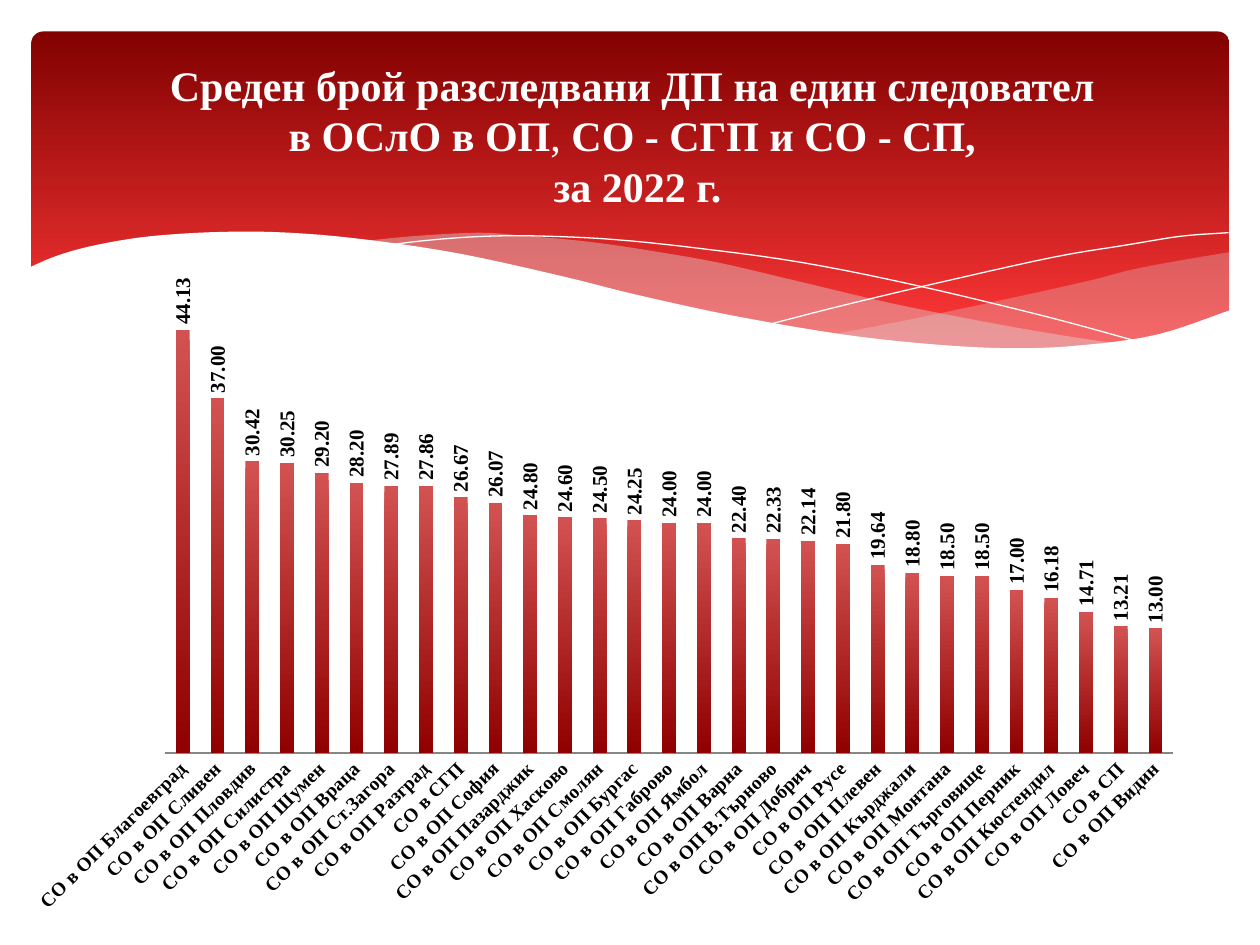
"""Build a slide with a red wave banner and a column chart of cases per investigator."""
from dataclasses import dataclass

from lxml import etree
from pptx import Presentation
from pptx import util as u
from pptx.chart.data import CategoryChartData
from pptx.dml.color import RGBColor
from pptx.enum import chart as charts, shapes, text
from pptx.oxml import parse_xml
from pptx.oxml.ns import nsdecls, qn


@dataclass(frozen=True)
class Theme:
    font: str = "Times New Roman"
    base_font: str = "Cabin"
    title_size: int = 24
    base_size: int = 18
    label_size: int = 12
    axis_size: int = 11
    white: str = "FFFFFF"
    black: str = "000000"
    pale: str = "DEDEE0"
    axis: str = "868686"
    banner: tuple = ((0, "820101"), (0.9, "FE3737"))
    bar: tuple = ((0, "D25252"), (1, "900000"))


VALUES = {
    "СО в ОП Благоевград": 44.13, "СО в ОП Сливен": 37, "СО в ОП Пловдив": 30.42,
    "СО в ОП Силистра": 30.25, "СО в ОП Шумен": 29.2, "СО в ОП Враца": 28.2,
    "СО в ОП Ст.Загора": 27.89, "СО в ОП Разград": 27.86, "СО в СГП": 26.67,
    "СО в ОП София": 26.07, "СО в ОП Пазарджик": 24.8, "СО в ОП Хасково": 24.6,
    "СО в ОП Смолян": 24.5, "СО в ОП Бургас": 24.25, "СО в ОП Габрово": 24,
    "СО в ОП Ямбол": 24, "СО в ОП Варна": 22.4, "СО в ОП В.Търново": 22.33,
    "СО в ОП Добрич": 22.14, "СО в ОП Русе": 21.8, "СО в ОП Плевен": 19.64,
    "СО в ОП Кърджали": 18.8, "СО в ОП Монтана": 18.5, "СО в ОП Търговище": 18.5,
    "СО в ОП Перник": 17, "СО в ОП Кюстендил": 16.18, "СО в ОП Ловеч": 14.71,
    "СО в СП": 13.21, "СО в ОП Видин": 13,
}

TITLE = (
    (("Среден брой разследвани ДП на един следовател ", True),),
    (("в ОСлО в ОП", True), (",", False), (" СО - СГП и СО - СП, ", True)),
    (("за 2022 г.", True),),
)

RIGHT_TOP = [(703, 144), (652, 153), (620, 161), (561, 174), (508, 185), (476, 191)]
RIGHT_BOTTOM = [(476, 191), (508, 195), (545, 199), (578, 200), (615, 199), (646, 194),
                (673, 189), (703, 178)]
WIDE_TOP = [(643, 197), (603, 191), (558, 183), (508, 173), (453, 160), (410, 150),
            (370, 143), (335, 138), (302, 135), (274, 133), (236, 135), (206, 138)]
WIDE_BOTTOM = [(206, 138), (246, 143), (291, 152), (323, 160), (382, 173), (433, 184),
               (479, 192), (520, 197), (557, 199), (589, 200), (617, 199), (643, 197)]
FALLING_LINE = [(222, 140), (248, 137), (279, 135), (312, 135), (352, 137), (400, 142),
                (458, 150), (523, 163), (598, 181), (653, 196)]
RISING_LINE = [(441, 185), (484, 174), (539, 161), (602, 147), (644, 140), (675, 135),
               (702, 133)]
WHITE_WAVE = [(703.5, 177), (662, 191), (621, 197), (582, 199), (536, 197), (481, 191),
              (417, 180), (362, 168), (322, 158), (263, 145), (210, 137), (166, 133),
              (127, 132.5), (86, 135), (55, 140), (33, 146), (16.5, 153)]
WAVE_BASE = [(16.5, 237), (703.5, 237)]


def smooth(points, steps=5):
    """Return a Catmull-Rom curve through the points."""
    ends = [points[0], *points, points[-1]]
    curve = [points[0]]
    for a, b, c, d in zip(ends, ends[1:], ends[2:], ends[3:]):
        for t in (i / steps for i in range(1, steps + 1)):
            curve.append(tuple(
                (2 * q + (r - p) * t + (2 * p - 5 * q + 4 * r - s) * t ** 2
                 + (3 * q - p - 3 * r + s) * t ** 3) / 2
                for p, q, r, s in zip(a, b, c, d)))
    return curve


class Builder:
    """Hold the theme and the current slide, and draw each kind of element."""

    def __init__(self, slide, theme):
        self.s, self.theme = slide, theme

    def font(self, font, size, color, bold=True, name=None):
        font.name, font.size, font.bold = name or self.theme.font, u.Pt(size), bold
        font.color.rgb = RGBColor.from_string(color)

    def gradient(self, fill, stops):
        fill.gradient()
        fill.gradient_angle = 270
        for stop, (position, color) in zip(fill.gradient_stops, stops):
            stop.position = position
            stop.color.rgb = RGBColor.from_string(color)

    def banner(self, left, top, width, height):
        sp = self.s.shapes.add_shape(shapes.MSO_SHAPE.ROUNDED_RECTANGLE,
                                     *map(u.Pt, (left, top, width, height)))
        sp.adjustments[0] = 0.034
        sp.shadow.inherit = False
        sp.line.fill.background()
        self.gradient(sp.fill, self.theme.banner)

    def outline(self, points, closed):
        (x, y), *rest = points
        pen = self.s.shapes.build_freeform(u.Pt(x), u.Pt(y))
        pen.add_line_segments([(u.Pt(a), u.Pt(b)) for a, b in rest], close=closed)
        sp = pen.convert_to_shape()
        sp.shadow.inherit = False
        return sp

    def area(self, points, color, opacity=100):
        sp = self.outline(points, True)
        sp.line.fill.background()
        sp.fill.solid()
        sp.fill.fore_color.rgb = RGBColor.from_string(color)
        if opacity < 100:
            clr = sp.element.spPr.find(qn("a:solidFill"))[0]
            etree.SubElement(clr, qn("a:alpha"), val=str(opacity * 1000))

    def curve(self, points):
        sp = self.outline(smooth(points), False)
        sp.fill.background()
        sp.line.color.rgb = RGBColor.from_string(self.theme.white)
        sp.line.width = u.Pt(0)

    def title(self, lines, left, top, width, height):
        sp = self.s.shapes.title
        self.s.shapes.element.append(sp.element)
        sp.left, sp.top, sp.width, sp.height = map(u.Pt, (left, top, width, height))
        tf = sp.text_frame
        tf.word_wrap, tf.auto_size = True, text.MSO_AUTO_SIZE.NONE
        tf.vertical_anchor = text.MSO_ANCHOR.MIDDLE
        p = tf.paragraphs[0]
        p.alignment = text.PP_ALIGN.CENTER
        for i, line in enumerate(lines):
            if i:
                p.add_line_break()
            for words, bold in line:
                r = p.add_run()
                r.text = words
                self.font(r.font, self.theme.title_size, self.theme.white, bold)
                r.font.fill._xPr.find(qn("a:solidFill")).addnext(parse_xml(
                    f'<a:effectLst {nsdecls("a")}><a:outerShdw blurRad="63500" dist="190500"'
                    ' dir="2700000"><a:srgbClr val="000000"><a:alpha val="35000"/>'
                    '</a:srgbClr></a:outerShdw></a:effectLst>'))
        for br in p._p.iter(qn("a:br")):
            etree.SubElement(br, qn("a:rPr"), sz=str(self.theme.title_size * 100))

    def columns(self, values, left, top, width, height):
        th = self.theme
        data = CategoryChartData(number_format="0.00")
        data.categories = list(values)
        data.add_series("Series 1", list(values.values()))
        chart = self.s.shapes.add_chart(charts.XL_CHART_TYPE.COLUMN_CLUSTERED,
                                        *map(u.Pt, (left, top, width, height)), data).chart
        chart.has_legend = chart.has_title = False
        self.font(chart.font, th.base_size, th.black, False, th.base_font)
        value, category = chart.value_axis, chart.category_axis
        value.minimum_scale, value.maximum_scale = 0, 50
        value.has_major_gridlines = value.visible = False
        category.major_tick_mark = charts.XL_TICK_MARK.NONE
        category.format.line.color.rgb = RGBColor.from_string(th.axis)
        self.font(category.tick_labels.font, th.axis_size, th.black)
        plot = chart.plots[0]
        plot.gap_width, plot.overlap, plot.vary_by_categories = 150, -25, False
        self.gradient(plot.series[0].format.fill, th.bar)
        plot.has_data_labels = True
        labels = plot.data_labels
        labels.show_value = True
        labels.number_format, labels.number_format_is_linked = "0.00", False
        labels.position = charts.XL_LABEL_POSITION.OUTSIDE_END
        self.font(labels.font, th.label_size, th.black)
        for part, degrees in ((category._element, -45), (labels._element, -90)):
            body = part.find(qn("c:txPr")).find(qn("a:bodyPr"))
            body.set("rot", str(degrees * 60000))
            body.set("vert", "horz")
        self.place_plot(chart, x=0.12, y=0.043, w=0.803, h=0.701)

    def place_plot(self, chart, **box):
        area = chart._chartSpace.chart.plotArea
        for old in area.findall(qn("c:layout")):
            area.remove(old)
        sizes = "".join(f'<c:{k} val="{v}"/>' for k, v in box.items())
        area.insert(0, parse_xml(
            f'<c:layout {nsdecls("c")}><c:manualLayout><c:layoutTarget val="inner"/>'
            f'<c:xMode val="edge"/><c:yMode val="edge"/>{sizes}</c:manualLayout></c:layout>'))


def main():
    prs = Presentation()
    prs.slide_width, prs.slide_height = u.Pt(720), u.Pt(540)
    theme = Theme()
    b = Builder(prs.slides.add_slide(prs.slide_layouts[5]), theme)
    b.banner(18, 18, 684.5, 194.5)
    b.area(smooth(RIGHT_TOP) + smooth(RIGHT_BOTTOM), theme.pale, 29)
    b.area(smooth(WIDE_TOP) + smooth(WIDE_BOTTOM), theme.pale, 40)
    b.curve(FALLING_LINE)
    b.curve(RISING_LINE)
    b.area(smooth(WHITE_WAVE) + WAVE_BASE, theme.white)
    b.title(TITLE, 8.5, 15, 711.5, 124.5)
    b.columns(VALUES, 8.5, 139.5, 717, 391)
    prs.save("out.pptx")


if __name__ == "__main__":
    main()
